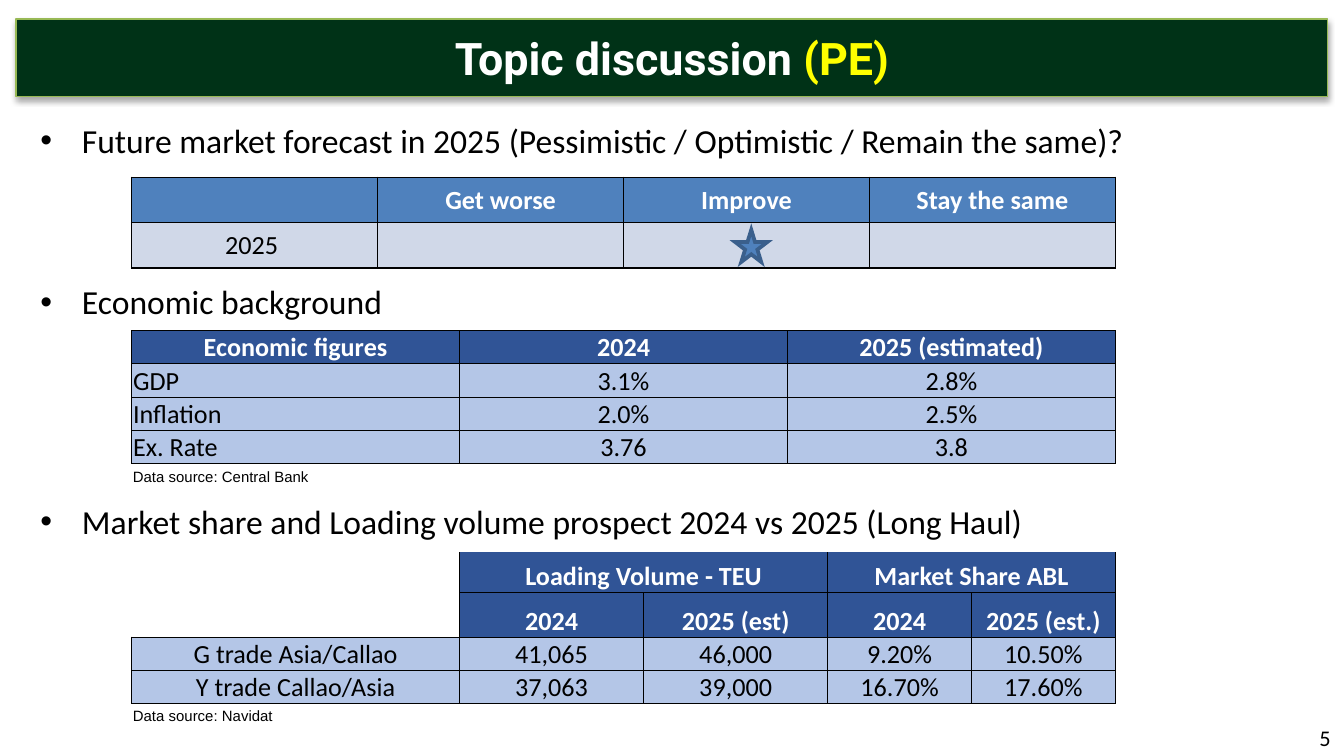
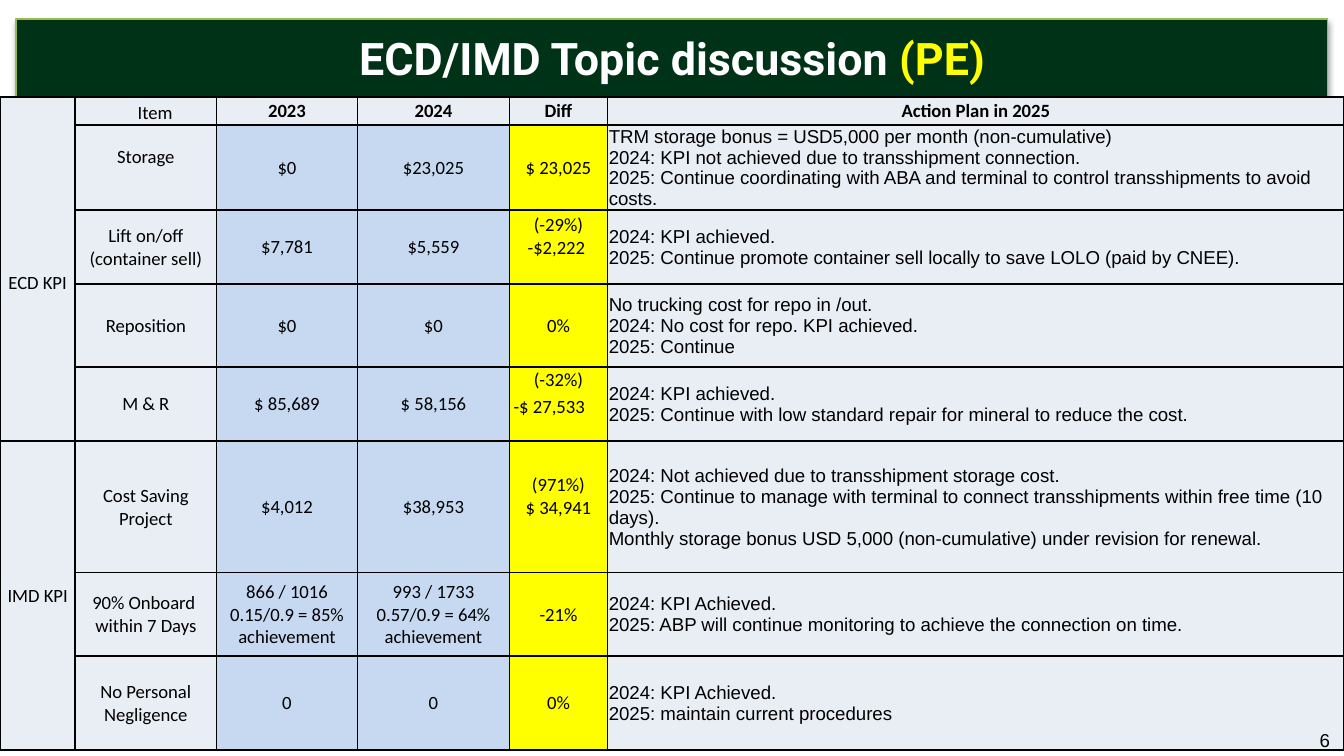
"""Build two slides on market topics and yearly indicators."""
from dataclasses import dataclass, field
from typing import Callable

from lxml import etree
from pptx import Presentation
from pptx.dml.color import RGBColor
from pptx.enum.shapes import MSO_SHAPE
from pptx.enum.text import MSO_ANCHOR, MSO_AUTO_SIZE, PP_ALIGN
from pptx.oxml.ns import qn
from pptx.util import Inches, Pt

LEFT, CENTER, RIGHT = PP_ALIGN.LEFT, PP_ALIGN.CENTER, PP_ALIGN.RIGHT
TOP, MIDDLE, BOTTOM = MSO_ANCHOR.TOP, MSO_ANCHOR.MIDDLE, MSO_ANCHOR.BOTTOM
NO_AUTOFIT = MSO_AUTO_SIZE.NONE
STAR = MSO_SHAPE.STAR_5_POINT
CONTENT_LAYOUT, TITLE_LAYOUT = 1, 5


@dataclass(frozen=True)
class Theme:
    """Colours, fonts and type sizes of the presentation."""
    black: str = "000000"
    white: str = "FFFFFF"
    yellow: str = "FFFF00"
    band: str = "003217"
    band_line: str = "98B955"
    blue: str = "4F81BD"
    blue_line: str = "3A5F8C"
    pale_blue: str = "D0D8E8"
    navy: str = "305496"
    light_navy: str = "B4C6E7"
    pale_grey: str = "E9EDF4"
    sky: str = "C6D9F1"
    title_font: str = "Roboto"
    text_font: str = "Calibri"
    plain_font: str = "Arial"
    title_size: int = 24
    body_size: int = 18
    table_size: int = 14
    page_size: int = 12
    small_size: int = 10
    source_size: int = 8


THEME = Theme()


@dataclass(frozen=True)
class TextStyle:
    """Look of a run of text."""
    size: int
    font: str = THEME.text_font
    color: str = THEME.black
    bold: bool = False


@dataclass(frozen=True)
class CellStyle:
    """Look of a table cell."""
    text: TextStyle
    fill: str | None
    align: PP_ALIGN = CENTER
    anchor: MSO_ANCHOR = BOTTOM
    borders: str = "LRTB"


@dataclass(frozen=True)
class TableSpec:
    """Content, geometry and styling rule of a table."""
    left: float
    top: float
    columns: list[float]
    rows: list[float]
    texts: list[list[str]]
    style: Callable[[int, int], CellStyle]
    border: float = 0.5
    tight: bool = True
    spans: list[tuple[int, int, int, int]] = field(default_factory=list)
    raised: set[tuple[int, int]] = field(default_factory=set)


@dataclass(frozen=True)
class Label:
    """A one-line text box."""
    text: str
    left: float
    top: float
    width: float
    height: float
    style: TextStyle
    align: PP_ALIGN = LEFT
    anchor: MSO_ANCHOR = TOP


def rgb(color: str) -> RGBColor:
    """Turn a hexadecimal string into a colour."""
    return RGBColor.from_string(color)


def format_run(run, style: TextStyle) -> None:
    """Apply a text style to a run."""
    run.font.name = style.font
    run.font.size = Pt(style.size)
    run.font.bold = style.bold
    run.font.color.rgb = rgb(style.color)


def format_paragraphs(text_frame, style: TextStyle, align: PP_ALIGN) -> None:
    """Style all paragraphs, sizing empty ones too."""
    for paragraph in text_frame.paragraphs:
        paragraph.alignment = align
        for run in paragraph.runs:
            format_run(run, style)
        if not paragraph.runs:
            paragraph._p.get_or_add_endParaRPr().set("sz", str(style.size * 100))


def place(shape, left: float, top: float, width: float, height: float) -> None:
    """Move and size a shape."""
    shape.left, shape.top = Inches(left), Inches(top)
    shape.width, shape.height = Inches(width), Inches(height)


def add_band_shadow(shape) -> None:
    """Give a shape a soft shadow below it."""
    effects = etree.SubElement(shape._element.spPr, qn("a:effectLst"))
    shadow = etree.SubElement(effects, qn("a:outerShdw"), blurRad=str(Pt(3.1)),
                              dist=str(Pt(1.8)), dir="5400000", rotWithShape="0")
    color = etree.SubElement(shadow, qn("a:srgbClr"), val=THEME.black)
    etree.SubElement(color, qn("a:alpha"), val="35000")


def set_title(slide, topic: str) -> None:
    """Turn the title placeholder into the green band."""
    title = slide.shapes.title
    place(title, 0.12, 0.14, 9.76, 0.58)
    title.fill.solid()
    title.fill.fore_color.rgb = rgb(THEME.band)
    title.line.color.rgb = rgb(THEME.band_line)
    title.line.width = Pt(0.75)
    add_band_shadow(title)
    frame = title.text_frame
    frame.auto_size = NO_AUTOFIT
    frame.vertical_anchor = MIDDLE
    frame.margin_left = frame.margin_right = frame.margin_top = frame.margin_bottom = 0
    paragraph = frame.paragraphs[0]
    paragraph.alignment = CENTER
    for text, color in ((f"{topic} ", THEME.white), ("(PE)", THEME.yellow)):
        run = paragraph.add_run()
        run.text = text
        format_run(run, TextStyle(THEME.title_size, THEME.title_font, color, True))


def set_bullets(slide, bullets: list[tuple[str, float]]) -> None:
    """Fill the body placeholder with bullets and the space before each."""
    body = slide.placeholders[1]
    place(body, 0.2, 0.84, 9.61, 4.44)
    frame = body.text_frame
    frame.auto_size = NO_AUTOFIT
    frame.text = "\n".join(text for text, _ in bullets)
    format_paragraphs(frame, TextStyle(THEME.body_size), LEFT)
    for paragraph, (_, space) in zip(frame.paragraphs, bullets):
        paragraph.space_before = Pt(space)
        properties = paragraph._p.get_or_add_pPr()
        properties.set("marL", str(Inches(0.31)))
        properties.set("indent", str(Inches(-0.31)))


def add_label(slide, label: Label) -> None:
    """Add a text box."""
    box = slide.shapes.add_textbox(Inches(label.left), Inches(label.top),
                                   Inches(label.width), Inches(label.height))
    frame = box.text_frame
    frame.word_wrap = True
    frame.vertical_anchor = label.anchor
    frame.text = label.text
    format_paragraphs(frame, label.style, label.align)


def add_star(slide) -> None:
    """Mark the chosen forecast with a sharp-cornered star."""
    star = slide.shapes.add_shape(STAR, Inches(5.47), Inches(1.71), Inches(0.24), Inches(0.24))
    star.shadow.inherit = False
    star.fill.solid()
    star.fill.fore_color.rgb = rgb(THEME.blue)
    star.line.color.rgb = rgb(THEME.blue_line)
    star.line.width = Pt(2)
    etree.SubElement(star._element.spPr.find(qn("a:ln")), qn("a:miter"), lim="800000")


def set_borders(cell, sides: str, width: float) -> None:
    """Draw the named sides of a cell and clear the others."""
    properties = cell._tc.get_or_add_tcPr()
    for side in "LRTB":
        line = etree.SubElement(properties, qn(f"a:ln{side}"), w=str(Pt(width)))
        if side in sides:
            fill = etree.SubElement(line, qn("a:solidFill"))
            etree.SubElement(fill, qn("a:srgbClr"), val=THEME.black)
        else:
            etree.SubElement(line, qn("a:noFill"))


def format_cell(cell, style: CellStyle, spec: TableSpec, raised: bool) -> None:
    """Apply borders, fill, margins and text style to a cell."""
    set_borders(cell, style.borders, spec.border)
    if style.fill:
        cell.fill.solid()
        cell.fill.fore_color.rgb = rgb(style.fill)
    else:
        cell.fill.background()
    if spec.tight:
        cell.margin_left = cell.margin_right = cell.margin_top = Inches(0.01)
        cell.margin_bottom = Inches(0.16 if raised else 0)
    cell.vertical_anchor = style.anchor
    format_paragraphs(cell.text_frame, style.text, style.align)


def add_table(slide, spec: TableSpec) -> None:
    """Add a table from its description."""
    frame = slide.shapes.add_table(
        len(spec.rows), len(spec.columns), Inches(spec.left), Inches(spec.top),
        Inches(sum(spec.columns)), Inches(sum(spec.rows)))
    table = frame.table
    table.first_row = table.horz_banding = False
    for column, width in zip(table.columns, spec.columns):
        column.width = Inches(width)
    for row, height in zip(table.rows, spec.rows):
        row.height = Inches(height)
    for top, left, bottom, right in spec.spans:
        table.cell(top, left).merge(table.cell(bottom, right))
    for row, texts in enumerate(spec.texts):
        for column, text in enumerate(texts):
            cell = table.cell(row, column)
            cell.text_frame.text = text
            format_cell(cell, spec.style(row, column), spec, (row, column) in spec.raised)


BODY = TextStyle(THEME.table_size)
HEADER = TextStyle(THEME.table_size, color=THEME.white, bold=True)


def forecast_style(row: int, column: int) -> CellStyle:
    """Style the forecast table."""
    if row == 0:
        return CellStyle(HEADER, THEME.blue, anchor=TOP)
    return CellStyle(BODY, THEME.pale_blue, anchor=TOP)


def economy_style(row: int, column: int) -> CellStyle:
    """Style the economic figures."""
    if row == 0:
        return CellStyle(HEADER, THEME.navy)
    return CellStyle(BODY, THEME.light_navy, LEFT if column == 0 else CENTER)


def share_style(row: int, column: int) -> CellStyle:
    """Style the volume and share table with its open corner."""
    if row > 1:
        return CellStyle(BODY, THEME.light_navy)
    if column == 0:
        return CellStyle(BODY, None, borders=("R", "RB")[row])
    return CellStyle(HEADER, THEME.navy, borders=("LRB", "LRTB")[row])


def indicator_style(row: int, column: int) -> CellStyle:
    """Style the indicator table by column."""
    heading = row == 0
    fills = [THEME.pale_grey] * 2 + [THEME.sky] * 2 + [THEME.yellow, THEME.pale_grey]
    action = column == 5 and not heading
    text = TextStyle(THEME.small_size, THEME.plain_font if action else THEME.text_font,
                     bold=heading and column > 1)
    return CellStyle(text, THEME.pale_grey if heading else fills[column],
                     LEFT if action else CENTER, MIDDLE)


FORECAST = TableSpec(0.98, 1.32, [1.83] * 4, [0.33] * 2, [
    ["", "Get worse", "Improve", "Stay the same"],
    ["2025 ", "", "", ""]], forecast_style, border=1, tight=False)
ECONOMY = TableSpec(0.98, 2.46, [2.44] * 3, [0.24] * 4, [
    ["Economic figures", "2024", "2025 (estimated)"],
    ["GDP", "3.1%", "2.8%"],
    ["Inflation", "2.0%", "2.5%"],
    ["Ex. Rate", "3.76", "3.8"]], economy_style)
SHARE = TableSpec(0.98, 4.11, [2.44, 1.37, 1.37, 1.07, 1.07], [0.3, 0.33, 0.24, 0.24], [
    ["", "Loading Volume - TEU", "", "Market Share ABL", ""],
    ["", "2024", "2025 (est)", "2024", "2025 (est.)"],
    ["G trade Asia/Callao", "41,065", "46,000", "9.20%", "10.50%"],
    ["Y trade Callao/Asia", "37,063", "39,000", "16.70%", "17.60%"]],
    share_style, spans=[(0, 1, 0, 2), (0, 3, 0, 4)])
INDICATORS = TableSpec(
    0, 0.72, [0.56, 1.05, 1.05, 1.13, 0.73, 5.48],
    [0.21, 0.63, 0.55, 0.62, 0.55, 0.98, 0.62, 0.7], [
        ["　\nECD KPI", "　Item", "2023", "2024", "Diff", "Action Plan in 2025"],
        ["", "Storage", "$0", "$23,025", "$ 23,025",
         "TRM storage bonus = USD5,000 per month (non-cumulative)\v2024: KPI not achieved due to "
         "transshipment connection.\v2025: Continue coordinating with ABA and terminal to control "
         "transshipments to avoid costs."],
        ["", "Lift on/off\n(container sell)", "$7,781", "$5,559", "(-29%)\n-$2,222 ",
         "2024: KPI achieved.\v2025: Continue promote container sell locally to save LOLO "
         "(paid by CNEE)."],
        ["", "Reposition", "$0", "$0", "0%", "No trucking cost for repo in /out.\n"
         "2024: No cost for repo. KPI achieved.\n2025: Continue"],
        ["", "M & R", "$ 85,689", "$ 58,156", "(-32%)\v-$ 27,533　", "2024: KPI achieved.\n"
         "2025: Continue with low standard repair for mineral to reduce the cost."],
        ["IMD KPI", "Cost Saving Project", "$4,012", "$38,953", "(971%)\n$ 34,941",
         "2024: Not achieved due to transshipment storage cost.\n2025: Continue to manage with "
         "terminal to connect transshipments within free time (10 days).\n"
         "Monthly storage bonus USD 5,000 (non-cumulative) under revision for renewal."],
        ["", "90% Onboard \nwithin 7 Days", "866 / 1016\n0.15/0.9 = 85% achievement",
         "993 / 1733\n0.57/0.9 = 64% achievement", "-21%", "2024: KPI Achieved. \n"
         "2025: ABP will continue monitoring to achieve the connection on time."],
        ["", "No Personal Negligence", "0", "0", "0%",
         "2024: KPI Achieved.\n2025: maintain current procedures"]],
    indicator_style, border=1, spans=[(0, 0, 4, 0), (5, 0, 7, 0)],
    raised={(1, 1), (2, 4), (4, 4), (5, 4)})


def build_market_slide(presentation) -> None:
    """Build the forecast, economy and market share slide."""
    slide = presentation.slides.add_slide(presentation.slide_layouts[CONTENT_LAYOUT])
    set_title(slide, "Topic discussion")
    set_bullets(slide, [
        ("Future market forecast in 2025 (Pessimistic / Optimistic / Remain the same)?", 0),
        ("Economic background", 65),
        ("Market share and Loading volume prospect 2024 vs 2025 (Long Haul)", 96)])
    for spec in (FORECAST, ECONOMY, SHARE):
        add_table(slide, spec)
    add_star(slide)
    source = TextStyle(THEME.source_size, THEME.plain_font)
    for name, top in (("Central Bank", 3.43), ("Navidat", 5.21)):
        add_label(slide, Label(f"Data source: {name}", 0.89, top, 4.09, 0.24, source))
    add_label(slide, Label("5", 7.67, 5.34, 2.33, 0.28, TextStyle(THEME.page_size), RIGHT))


def build_indicator_slide(presentation) -> None:
    """Build the yearly indicator slide."""
    slide = presentation.slides.add_slide(presentation.slide_layouts[TITLE_LAYOUT])
    set_title(slide, "ECD/IMD Topic discussion")
    add_table(slide, INDICATORS)
    add_label(slide, Label("6", 9.72, 5.39, 0.28, 0.23,
                           TextStyle(THEME.small_size, THEME.plain_font), anchor=MIDDLE))


def main() -> None:
    """Create and save the presentation."""
    presentation = Presentation()
    presentation.slide_width = Inches(10)
    presentation.slide_height = presentation.slide_width * 9 // 16
    build_market_slide(presentation)
    build_indicator_slide(presentation)
    presentation.save("out.pptx")


if __name__ == "__main__":
    main()
